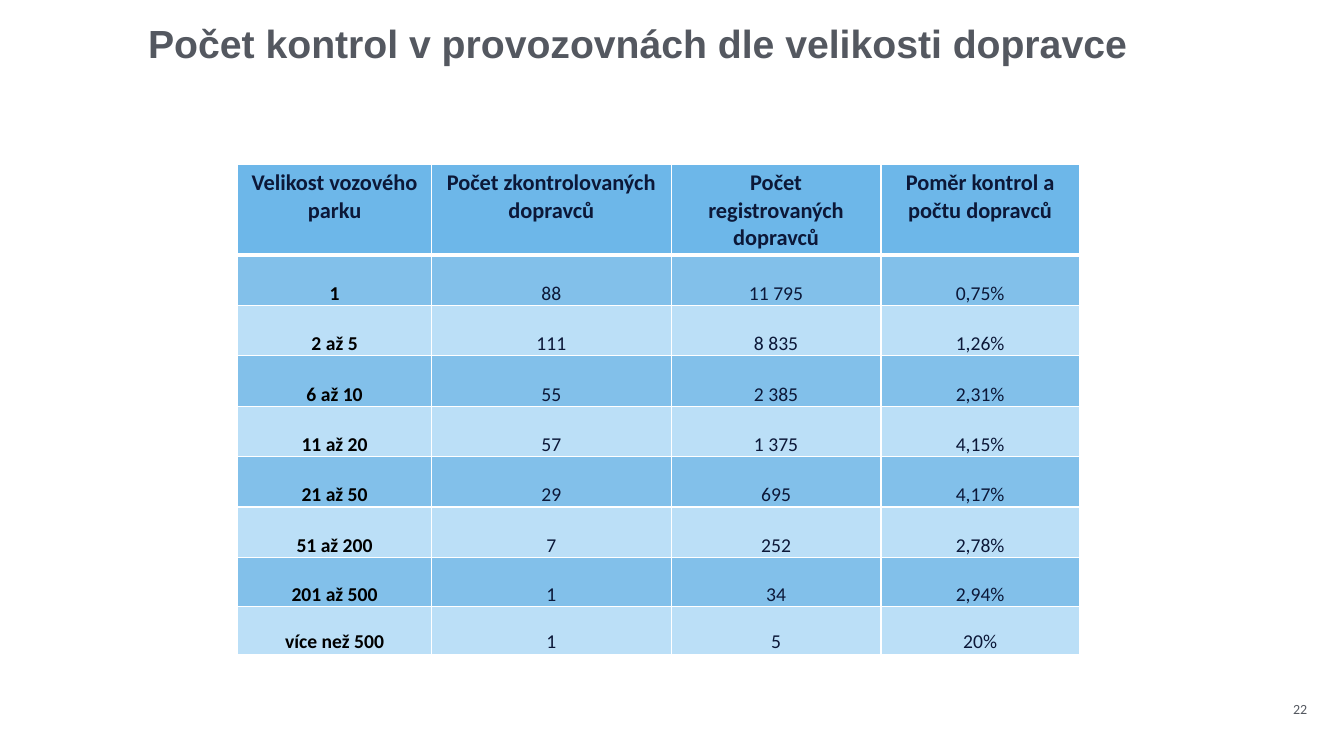
import pptx
import pptx.util
import pptx.dml.color
import pptx.enum.text
import pptx.oxml
import pptx.oxml.ns

Pt = pptx.util.Pt
ANCHOR = pptx.enum.text.MSO_ANCHOR

TITLE = "Počet kontrol v provozovnách dle velikosti dopravce"
PAGE_NUMBER = "22"
HEADERS = (
    "Velikost vozového parku",
    "Počet zkontrolovaných dopravců",
    "Počet registrovaných dopravců",
    "Poměr kontrol a počtu dopravců",
)
INSPECTIONS = [
    ("1", "88", "11 795", "0,75%"),
    ("2 až 5", "111", "8 835", "1,26%"),
    ("6 až 10", "55", "2 385", "2,31%"),
    ("11 až 20", "57", "1 375", "4,15%"),
    ("21 až 50", "29", "695", "4,17%"),
    ("51 až 200", "7", "252", "2,78%"),
    ("201 až 500", "1", "34", "2,94%"),
    ("více než 500", "1", "5", "20%"),
]
COLORS = {
    "title": "545860",
    "text": "0C1838",
    "size": "000000",
    "header": "6DB7E9",
    "dark_band": "82C0EA",
    "light_band": "BBDFF7",
    "border": "FFFFFF",
}
COLUMN_WIDTHS = [138.24, 171.36, 149.76, 141.84]
ROW_HEIGHTS = [64.8] + [36] * 6 + [35.28, 33.84]
HEADER_MARGINS = (7.2, 3.6, 7.2, 3.6)
BODY_MARGINS = (0.72, 0.72, 0.72, 0)


def rgb(name):
    return pptx.dml.color.RGBColor.from_string(COLORS[name])


def style_paragraph(paragraph, size, font_name, color, bold=False):
    font = paragraph.font
    font.size, font.name, font.bold = Pt(size), font_name, bold
    font.color.rgb = rgb(color)


def set_margins(target, margins):
    """Set left, top, right and bottom margins of a cell or text frame."""
    for side, margin in zip(("left", "top", "right", "bottom"), margins):
        setattr(target, f"margin_{side}", Pt(margin))


def add_text(slide, text, box, margins):
    frame = slide.shapes.add_textbox(*map(Pt, box)).text_frame
    frame.word_wrap = True
    set_margins(frame, margins)
    paragraph = frame.paragraphs[0]
    paragraph.text = text
    return paragraph


def set_borders(cell, top, bottom):
    """Draw solid borders; side borders are always one point wide."""
    properties = cell._tc.get_or_add_tcPr()
    widths = (("lnL", 1), ("lnR", 1), ("lnT", top), ("lnB", bottom))
    for position, (tag, width) in enumerate(widths):
        line = pptx.oxml.parse_xml(
            f'<a:{tag} {pptx.oxml.ns.nsdecls("a")} w="{Pt(width)}"><a:solidFill>'
            f'<a:srgbClr val="{COLORS["border"]}"/></a:solidFill></a:{tag}>'
        )
        properties.insert(position, line)


def fill_cell(cell, text, row, column):
    is_header = row == 0
    cell.text = text
    cell.vertical_anchor = ANCHOR.TOP if is_header else ANCHOR.BOTTOM
    set_margins(cell, HEADER_MARGINS if is_header else BODY_MARGINS)
    band = "header" if is_header else "dark_band" if row % 2 else "light_band"
    cell.fill.solid()
    cell.fill.fore_color.rgb = rgb(band)
    set_borders(cell, top=3 if row == 1 else 1, bottom=3 if is_header else 1)
    paragraph = cell.text_frame.paragraphs[0]
    paragraph.alignment = pptx.enum.text.PP_ALIGN.CENTER
    color = "size" if column == 0 and not is_header else "text"
    style_paragraph(paragraph, 16 if is_header else 14, "Calibri", color,
                    bold=is_header or column == 0)


def add_inspection_table(slide):
    rows = [HEADERS] + INSPECTIONS
    table = slide.shapes.add_table(
        len(rows), len(HEADERS), Pt(169.92), Pt(117.36),
        Pt(sum(COLUMN_WIDTHS)), Pt(sum(ROW_HEIGHTS)),
    ).table
    for column, width in zip(table.columns, COLUMN_WIDTHS):
        column.width = Pt(width)
    for row, height in zip(table.rows, ROW_HEIGHTS):
        row.height = Pt(height)
    for row, texts in enumerate(rows):
        for column, text in enumerate(texts):
            fill_cell(table.cell(row, column), text, row, column)


def main():
    presentation = pptx.Presentation()
    presentation.slide_width, presentation.slide_height = Pt(960), Pt(540)
    slide = presentation.slides.add_slide(presentation.slide_layouts[6])

    title = add_text(slide, TITLE, (105.84, 17.28, 703.44, 67.68), (0, 0, 0, 0))
    title.line_spacing = 0.9
    style_paragraph(title, 28, "Arial", "title", bold=True)

    add_inspection_table(slide)

    number = add_text(slide, PAGE_NUMBER, (916.56, 496.8, 34.56, 19.44), HEADER_MARGINS)
    style_paragraph(number, 10, "Calibri", "title")

    presentation.save("out.pptx")


if __name__ == "__main__":
    main()
